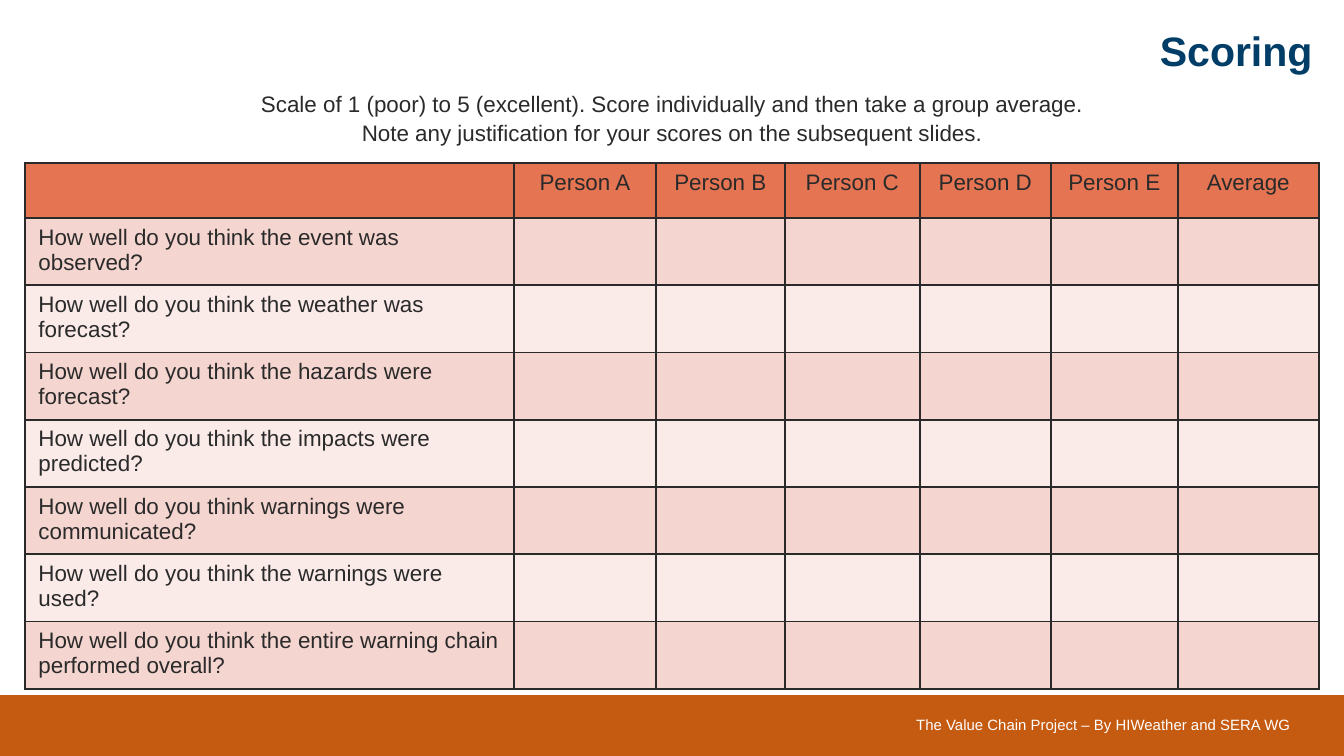
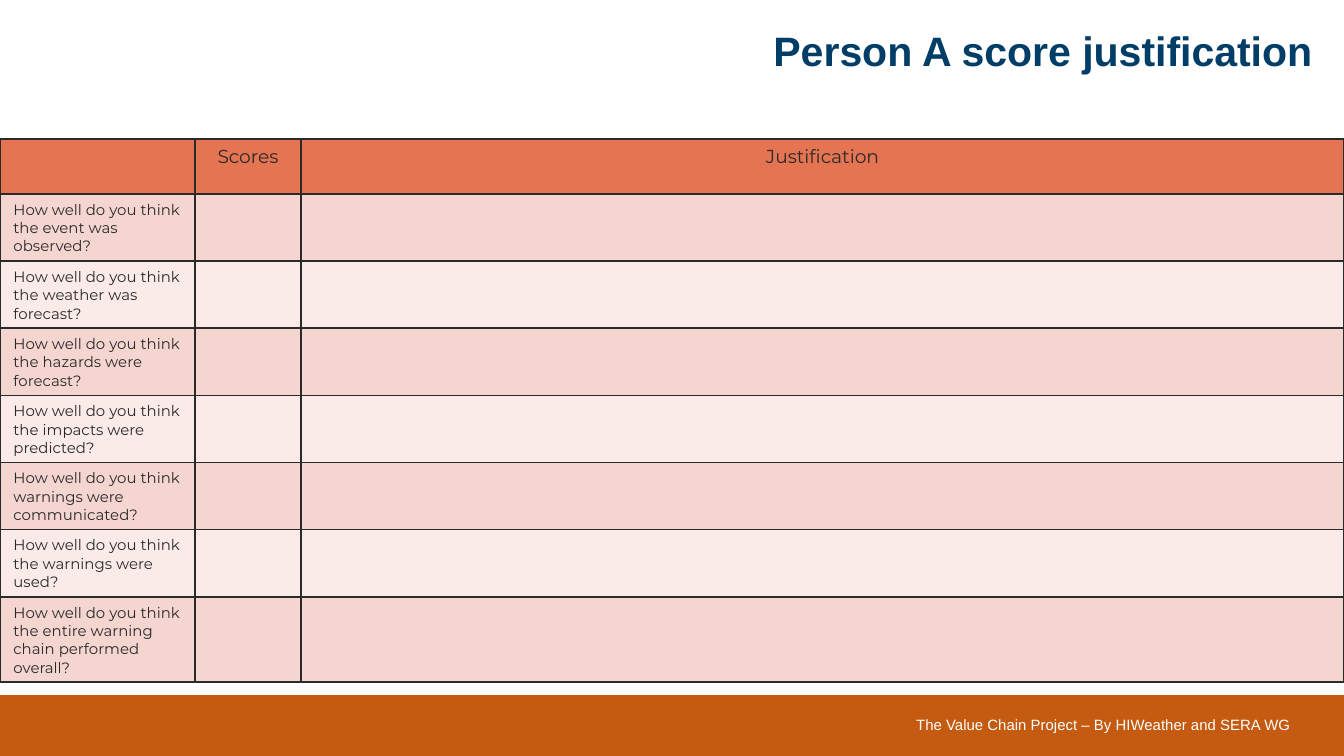
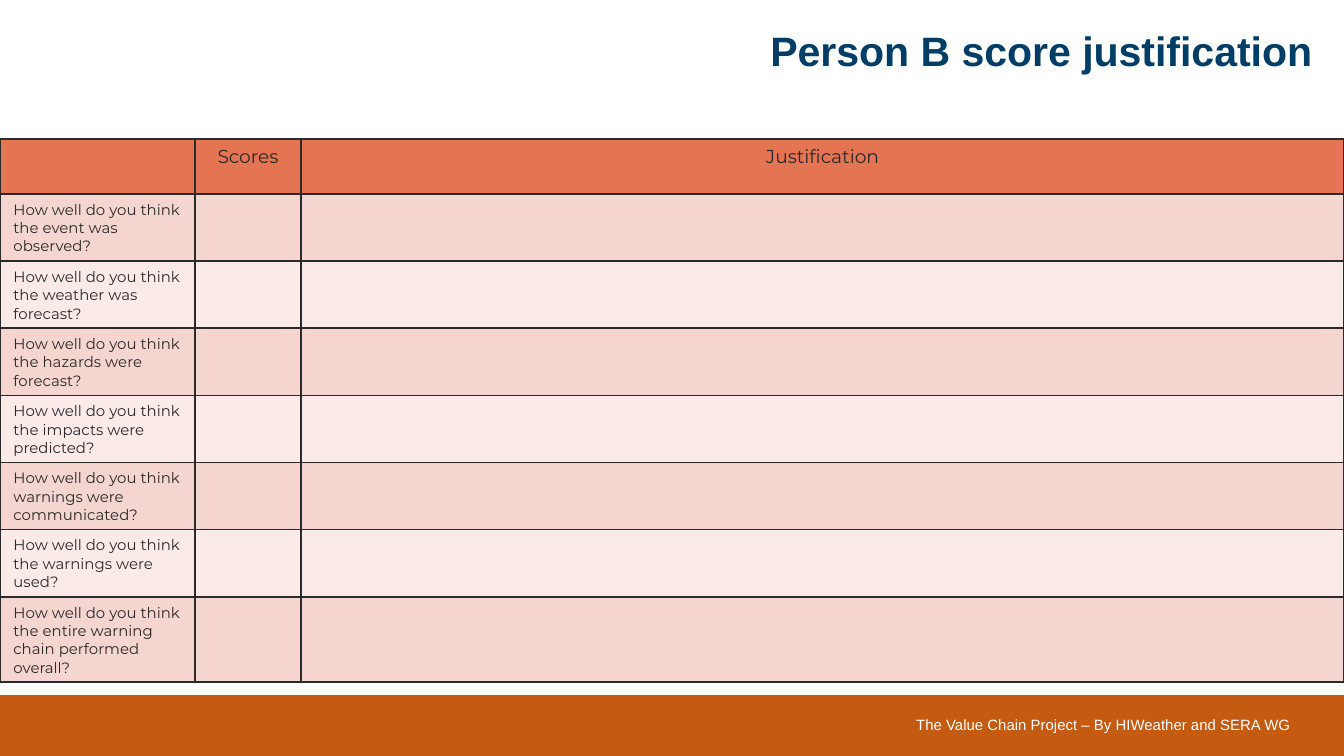
from dataclasses import dataclass

from lxml import etree
from pptx import Presentation
from pptx.dml.color import RGBColor
from pptx.enum.shapes import MSO_SHAPE
from pptx.enum.text import MSO_ANCHOR, MSO_AUTO_SIZE, PP_ALIGN
from pptx.oxml.ns import qn
from pptx.util import Pt

RECTANGLE = MSO_SHAPE.RECTANGLE
TOP, MIDDLE = MSO_ANCHOR.TOP, MSO_ANCHOR.MIDDLE
GROW = MSO_AUTO_SIZE.SHAPE_TO_FIT_TEXT
LEFT, CENTER, RIGHT = PP_ALIGN.LEFT, PP_ALIGN.CENTER, PP_ALIGN.RIGHT

EMU_PER_PX = 914400 / 134.4
SLIDE_W, SLIDE_H = 1344, 756
TITLE_ONLY = 5
ROW_H = 55

FOOTER = "The Value Chain Project – By HIWeather and SERA WG"
INSTRUCTIONS = (
    "Scale of 1 (poor) to 5 (excellent). Score individually and then take a group average. "
    "Note any justification for your scores on the subsequent slides."
)
PEOPLE = ["Person A", "Person B", "Person C", "Person D", "Person E"]
QUESTIONS = [
    f"How well do you think {ending}?"
    for ending in (
        "the event was observed",
        "the weather was forecast",
        "the hazards were forecast",
        "the impacts were predicted",
        "warnings were communicated",
        "the warnings were used",
        "the entire warning chain performed overall",
    )
]


@dataclass(frozen=True)
class Theme:
    """Colours, fonts and type sizes shared by the slides."""

    ink: str = "2A2A2A"
    title: str = "003D67"
    band: str = "C55A11"
    white: str = "FFFFFF"
    header: str = "E47452"
    stripes: tuple = ("F5D5CF", "FAEBE9")
    font: str = "Arial"
    form_font: str = "Montserrat"
    title_size: int = 22
    text_size: int = 12
    form_header_size: int = 10
    small_size: int = 8
    rule_width: int = 1


THEME = Theme()


def px(length):
    """Turn whole pixels into EMU."""
    return round(length * EMU_PER_PX)


def place(shape, left, top, width, height):
    """Move and size a shape given pixel lengths."""
    box = {"left": left, "top": top, "width": width, "height": height}
    for side, length in box.items():
        setattr(shape, side, px(length))


def write(frame, text, size, color=THEME.ink, align=LEFT, font=THEME.font, bold=False, spacing=1.0):
    """Fill a text frame with one formatted paragraph."""
    paragraph = frame.paragraphs[0]
    paragraph.alignment = align
    paragraph.line_spacing = spacing
    run = paragraph.add_run()
    run.text = text
    for key, value in {"size": Pt(size), "name": font, "bold": bold}.items():
        setattr(run.font, key, value)
    run.font.color.rgb = RGBColor.from_string(color)


def set_frame(frame, **layout):
    """Apply wrapping and other layout values to a text frame."""
    for key, value in {"word_wrap": True, **layout}.items():
        setattr(frame, key, value)


def add_footer(slide):
    """Draw the bottom band and its project line."""
    band = slide.shapes.add_shape(RECTANGLE, 0, px(696), px(SLIDE_W), px(60))
    band.shadow.inherit = False
    band.fill.solid()
    band.fill.fore_color.rgb = band.line.color.rgb = RGBColor.from_string(THEME.band)
    band.line.width = Pt(THEME.rule_width)
    credit = slide.shapes.add_textbox(0, px(695), px(SLIDE_W), px(60)).text_frame
    set_frame(credit, vertical_anchor=MIDDLE, margin_left=px(53), margin_right=px(53))
    write(credit, FOOTER, THEME.small_size, THEME.white, RIGHT)


def add_scoring_slide(deck, title):
    """Add a slide with the shared title and footer."""
    slide = deck.slides.add_slide(deck.slide_layouts[TITLE_ONLY])
    heading = slide.shapes.title
    place(heading, 431, 19, 895, 63)
    set_frame(heading.text_frame, vertical_anchor=TOP, auto_size=GROW)
    write(heading.text_frame, title, THEME.title_size, THEME.title, RIGHT, bold=True)
    add_footer(slide)
    return slide


def add_instructions(slide):
    """Add the centred note on how to score."""
    note = slide.shapes.add_textbox(px(231), px(82), px(883), px(67)).text_frame
    set_frame(note, auto_size=GROW)
    write(note, INSTRUCTIONS, THEME.text_size, align=CENTER, spacing=1.07)


def style_cell(cell, fill):
    """Fill a cell and rule all four of its sides."""
    cell.fill.solid()
    cell.fill.fore_color.rgb = RGBColor.from_string(fill)
    properties = cell._tc.get_or_add_tcPr()
    for index, side in enumerate(("lnL", "lnR", "lnT", "lnB")):
        rule = etree.Element(qn(f"a:{side}"), w=str(Pt(THEME.rule_width)))
        paint = etree.SubElement(rule, qn("a:solidFill"))
        etree.SubElement(paint, qn("a:srgbClr"), val=THEME.ink)
        properties.insert(index, rule)


def add_question_table(slide, left, top, widths, headings, font, header_size, question_size):
    """Add a table with one striped row for each question."""
    rows = len(QUESTIONS) + 1
    table = slide.shapes.add_table(
        rows, len(widths), px(left), px(top), px(sum(widths)), px(ROW_H * rows)
    ).table
    table.horz_banding = False
    for column, width in zip(table.columns, widths):
        column.width = px(width)
    for index, row in enumerate(table.rows):
        row.height = px(ROW_H)
        fill = THEME.stripes[(index - 1) % 2] if index else THEME.header
        for cell in row.cells:
            style_cell(cell, fill)
    for column, heading in enumerate(headings, 1):
        write(table.cell(0, column).text_frame, heading, header_size, align=CENTER, font=font)
    for row, question in enumerate(QUESTIONS, 1):
        write(table.cell(row, 0).text_frame, question, question_size, font=font)


def add_justification_slide(deck, person):
    """Add the form on which one person explains their scores."""
    slide = add_scoring_slide(deck, f"{person} score justification")
    add_question_table(
        slide, 0, 139, [195, 106, 1043], ["Scores", "Justification"],
        THEME.form_font, THEME.form_header_size, THEME.small_size,
    )


def main():
    """Build and save the scoring deck."""
    deck = Presentation()
    deck.slide_width, deck.slide_height = px(SLIDE_W), px(SLIDE_H)
    scoring = add_scoring_slide(deck, "Scoring")
    add_instructions(scoring)
    add_question_table(
        scoring, 25, 163, [489, 142, 129, 135, 131, 127, 141], [*PEOPLE, "Average"],
        THEME.font, THEME.text_size, THEME.text_size,
    )
    for person in PEOPLE[:2]:
        add_justification_slide(deck, person)
    deck.save("out.pptx")


if __name__ == "__main__":
    main()
